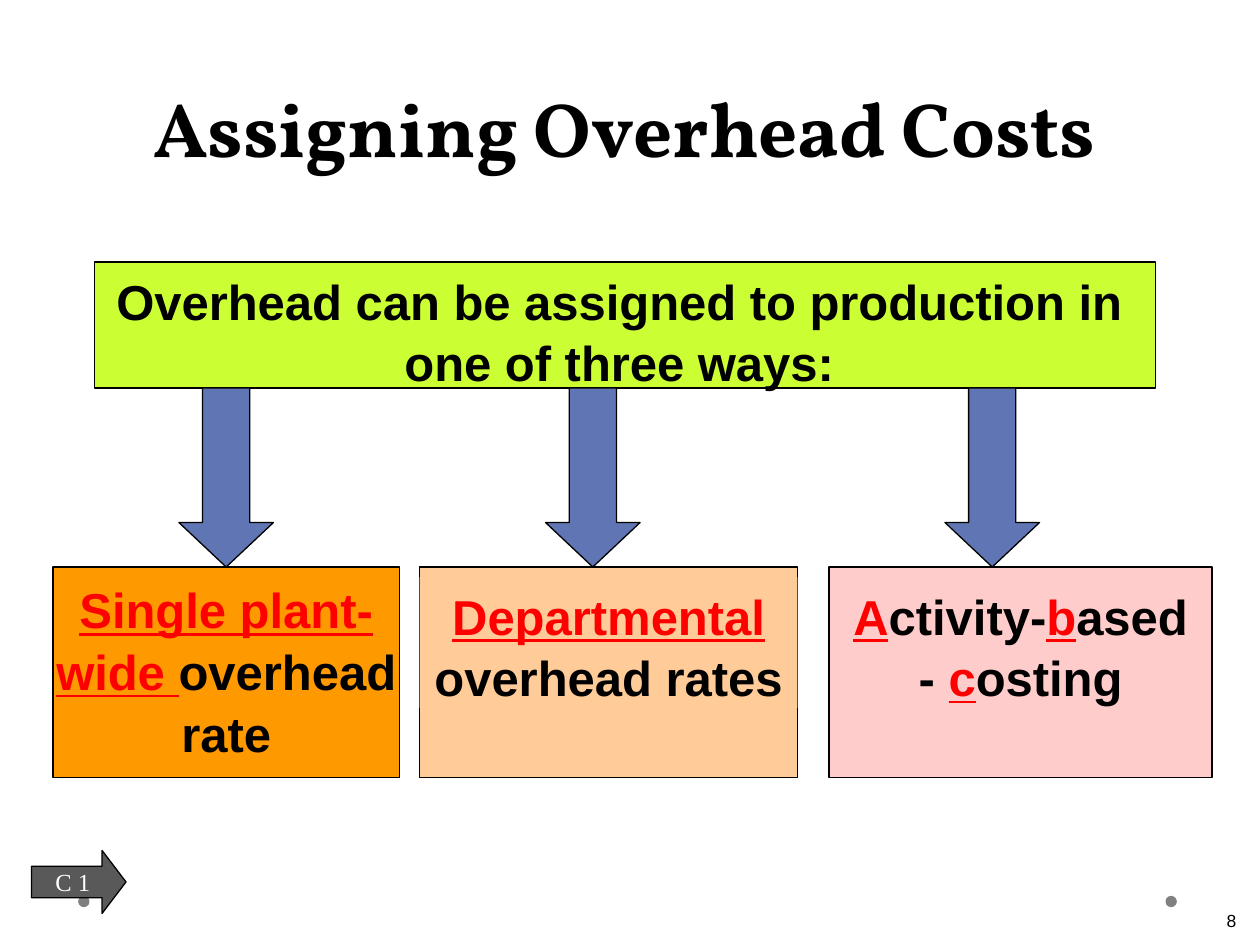
import pptx
import pptx.util
import pptx.dml.color
import pptx.enum.shapes
import pptx.enum.text

Inches, Pt = pptx.util.Inches, pptx.util.Pt
SHAPE = pptx.enum.shapes.MSO_SHAPE
ALIGN = pptx.enum.text.PP_ALIGN
ANCHOR = pptx.enum.text.MSO_ANCHOR

COLORS = {
    "black": "000000", "white": "FFFFFF", "red": "FF0000", "dot": "808080",
    "lime": "CCFF33", "orange": "FF9900", "peach": "FFCC99", "pink": "FFCCCC",
    "blue": "6076B4", "gray": "595959",
}

TITLE = "Assigning Overhead Costs"
BANNER = "Overhead can be assigned to production in one of three ways:"
PAGE_NUMBER = "8"
OBJECTIVE = "C 1"

# Spans are (text, highlighted); the panel repeats its fill behind the text.
METHODS = [
    {"left": 0.42, "width": 2.75, "fill": "orange", "arrow": 1.42,
     "text_height": 1.4, "inset": 0, "panel": False,
     "spans": [("Single plant-wide ", True), ("overhead rate", False)]},
    {"left": 3.33, "width": 3, "fill": "peach", "arrow": 4.33,
     "text_height": 1.04, "inset": 0.1, "panel": True,
     "spans": [("Departmental", True), (" overhead rates", False)]},
    {"left": 6.58, "width": 3.04, "fill": "pink", "arrow": 7.5,
     "text_height": 1.04, "inset": 0.1, "panel": False,
     "spans": [("A", True), ("ctivity-", False), ("b", True),
               ("ased - ", False), ("c", True), ("osting", False)]},
]

BANNER_TOP, BANNER_HEIGHT = 2.08, 1
ARROW_TOP = BANNER_TOP + BANNER_HEIGHT
METHOD_TOP, METHOD_HEIGHT = 4.5, 1.67
DOT_SIZE = 0.09


def rgb(name):
    return pptx.dml.color.RGBColor.from_string(COLORS[name])


def add_shape(shapes, kind, at, fill, outlined=True, adjustments=()):
    shape = shapes.add_shape(kind, *map(Inches, at))
    shape.shadow.inherit = False
    shape.fill.solid()
    shape.fill.fore_color.rgb = rgb(fill)
    if outlined:
        shape.line.color.rgb = rgb("black")
        shape.line.width = Pt(0.75)
    else:
        shape.line.fill.background()
    for index, value in enumerate(adjustments):
        shape.adjustments[index] = value
    return shape


def write(shape, spans, size, font="Arial", color="black", bold=False,
          align=ALIGN.CENTER, anchor=ANCHOR.TOP, spacing=None, inset=0.1, wrap=True):
    """Fill a shape with one paragraph; highlighted spans are red and underlined."""
    frame = shape.text_frame
    frame.word_wrap = wrap
    frame.vertical_anchor = anchor
    frame.margin_left = frame.margin_right = Inches(inset)
    frame.margin_top = frame.margin_bottom = Inches(inset / 2)
    para = frame.paragraphs[0]
    para.alignment = align
    para.line_spacing = spacing
    for text, highlighted in spans:
        span = para.add_run()
        span.text = text
        span.font.name = font
        span.font.size = Pt(size)
        span.font.bold = bold
        span.font.underline = highlighted
        span.font.color.rgb = rgb("red" if highlighted else color)


def add_text(shapes, at, spans, size, **style):
    write(shapes.add_textbox(*map(Inches, at)), spans, size, **style)


def add_method(page, method):
    group = page.shapes.add_group_shape()
    left, width = method["left"], method["width"]
    add_shape(group.shapes, SHAPE.RECTANGLE,
              (left, METHOD_TOP, width, METHOD_HEIGHT), method["fill"])
    text_at = (left, METHOD_TOP + 0.08, width, method["text_height"])
    if method["panel"]:
        box = add_shape(group.shapes, SHAPE.RECTANGLE, text_at, method["fill"],
                        outlined=False)
    else:
        box = group.shapes.add_textbox(*map(Inches, text_at))
    write(box, method["spans"], 28, bold=True, spacing=1.05, inset=method["inset"])


def main():
    deck = pptx.Presentation()
    deck.slide_width, deck.slide_height = Inches(10), Inches(7.5)
    page = deck.slides.add_slide(deck.slide_layouts[6])
    shapes = page.shapes

    for left in (9.25, 0.62):
        add_shape(shapes, SHAPE.OVAL, (left, 7.11, DOT_SIZE, DOT_SIZE), "dot",
                  outlined=False)
    add_text(shapes, (1.04, 0.35, 7.83, 1.07), [(TITLE, False)], 44, font="Vollkorn",
             bold=True, anchor=ANCHOR.BOTTOM, spacing=Pt(58))

    add_shape(shapes, SHAPE.RECTANGLE, (0.75, BANNER_TOP, 8.42, BANNER_HEIGHT), "lime")
    add_text(shapes, (0.75, BANNER_TOP, 8.33, 1.03), [(BANNER, False)], 28,
             bold=True, spacing=1.05)

    for method in METHODS:
        add_method(page, method)
    for method in METHODS:
        add_shape(shapes, SHAPE.DOWN_ARROW,
                  (method["arrow"], ARROW_TOP, 0.75, METHOD_TOP - ARROW_TOP), "blue",
                  adjustments=(0.5, 0.47))

    add_text(shapes, (9.33, 7.17, 0.58, 0.25), [(PAGE_NUMBER, False)], 10,
             align=ALIGN.RIGHT)
    objective = add_shape(shapes, SHAPE.RIGHT_ARROW, (0.25, 6.75, 0.75, 0.5), "gray",
                          adjustments=(0.5, 0.38))
    write(objective, [(OBJECTIVE, False)], 14, font="Times New Roman", color="white",
          anchor=ANCHOR.MIDDLE, wrap=False)

    deck.save("out.pptx")


if __name__ == "__main__":
    main()
